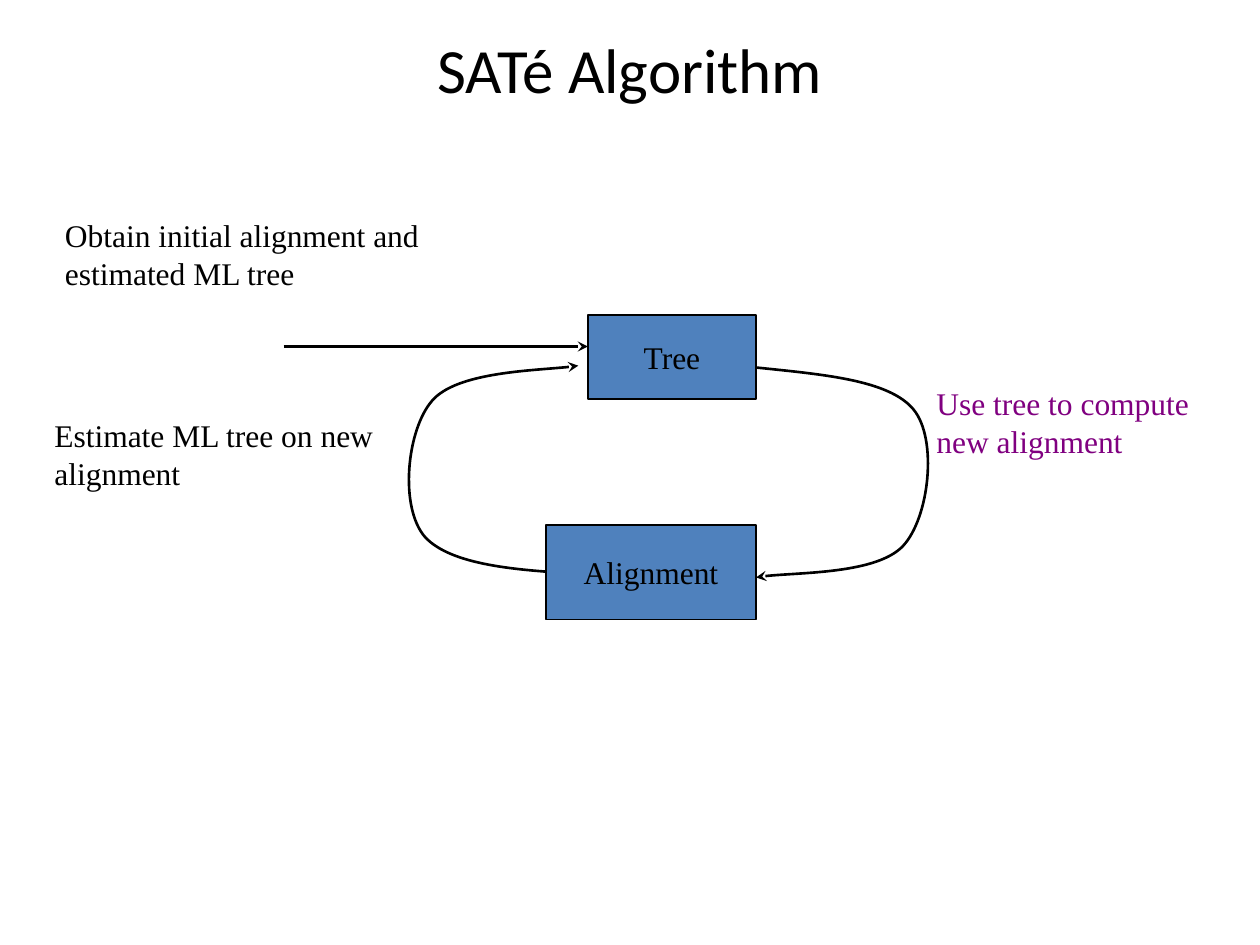
from lxml.etree import SubElement
from pptx import Presentation
from pptx.dml.color import RGBColor
from pptx.enum.shapes import MSO_CONNECTOR as CONN, MSO_SHAPE as SHAPE
from pptx.enum.text import MSO_ANCHOR as ANCHOR, PP_ALIGN as ALIGN
from pptx.oxml.ns import qn
from pptx.util import Pt


def rgb(value):
    """Turn a hex string into a colour."""
    return RGBColor.from_string(value)


def write(tf, text, font="Times New Roman", size=18, color="000000",
          align=ALIGN.LEFT, anchor=ANCHOR.TOP, wrap=True):
    """Put one formatted paragraph into a text frame."""
    tf.word_wrap = wrap
    tf.vertical_anchor = anchor
    p = tf.paragraphs[0]
    p.alignment = align
    r = p.add_run()
    r.text = text
    r.font.name, r.font.size = font, Pt(size)
    r.font.color.rgb = rgb(color)


class Diagram:
    """Draw the elements of a flow diagram on one slide."""

    ink = "000000"
    box_fill = "4F81BD"
    thin, thick = 0.75, 1.5

    def __init__(self, slide):
        """Keep the slide to draw on."""
        self.shapes = slide.shapes

    def label(self, text, left, top, width, height, **fmt):
        """Add a text box."""
        sp = self.shapes.add_textbox(Pt(left), Pt(top), Pt(width), Pt(height))
        write(sp.text_frame, text, **fmt)

    def box(self, text, left, top, width, height):
        """Add a filled rectangle with centred text."""
        sp = self.shapes.add_shape(SHAPE.RECTANGLE, Pt(left), Pt(top), Pt(width), Pt(height))
        sp.shadow.inherit = False
        sp.fill.solid()
        sp.fill.fore_color.rgb = rgb(self.box_fill)
        sp.line.color.rgb = rgb(self.ink)
        sp.line.width = Pt(self.thin)
        write(sp.text_frame, text, align=ALIGN.CENTER, anchor=ANCHOR.MIDDLE, wrap=False)

    def stroke(self, sp):
        """Style a line and end it with a stealth arrowhead."""
        sp.line.color.rgb = rgb(self.ink)
        sp.line.width = Pt(self.thick)
        SubElement(sp.line._get_or_add_ln(), qn("a:tailEnd"), type="stealth")

    def arrow(self, x1, y1, x2, y2):
        """Add a straight arrow."""
        sp = self.shapes.add_connector(CONN.STRAIGHT, Pt(x1), Pt(y1), Pt(x2), Pt(y2))
        self.stroke(sp)
        SubElement(sp._element.spPr, qn("a:effectLst"))

    def curve(self, start, *points):
        """Add a curved arrow, with three points for each Bézier segment."""
        fb = self.shapes.build_freeform(Pt(start[0]), Pt(start[1]))
        fb.add_line_segments([(Pt(x), Pt(y)) for x, y in points], close=False)
        sp = fb.convert_to_shape()
        sp.shadow.inherit = False
        sp.fill.background()
        self.stroke(sp)
        steps = sp._element.xpath(".//a:lnTo")
        outline = steps[0].getparent()
        for i in range(0, len(steps), 3):
            bezier = SubElement(outline, qn("a:cubicBezTo"))
            for step in steps[i:i + 3]:
                bezier.append(step[0])
                outline.remove(step)


def main():
    """Build the slide and save it."""
    prs = Presentation()
    prs.slide_width, prs.slide_height = Pt(720), Pt(540)
    d = Diagram(prs.slides.add_slide(prs.slide_layouts[6]))

    d.label("SATé Algorithm", 54, 12, 612, 54, font="Calibri", size=36,
            align=ALIGN.CENTER, anchor=ANCHOR.MIDDLE)
    d.label("Estimate ML tree on new alignment", 24, 234, 216, 65)
    d.curve((333.5, 328), (295, 326), (258, 323), (243, 307),
            (228, 290), (232.5, 245.5), (247, 229),
            (261, 212.5), (315, 211.5), (330.5, 209))
    d.box("Tree", 336, 180, 96, 48)
    d.arrow(162, 198, 336, 198)
    d.label("Obtain initial alignment and estimated ML tree", 30, 120, 264, 65)
    d.curve((432, 210), (470, 214), (508, 217), (522, 234),
            (536, 251), (531, 296), (516, 312),
            (501, 328), (447, 327), (432, 330))
    d.label("Use tree to compute new alignment", 528, 216, 192, 94, color="800080")
    d.box("Alignment", 312, 300, 120, 54)
    prs.save("out.pptx")


if __name__ == "__main__":
    main()
